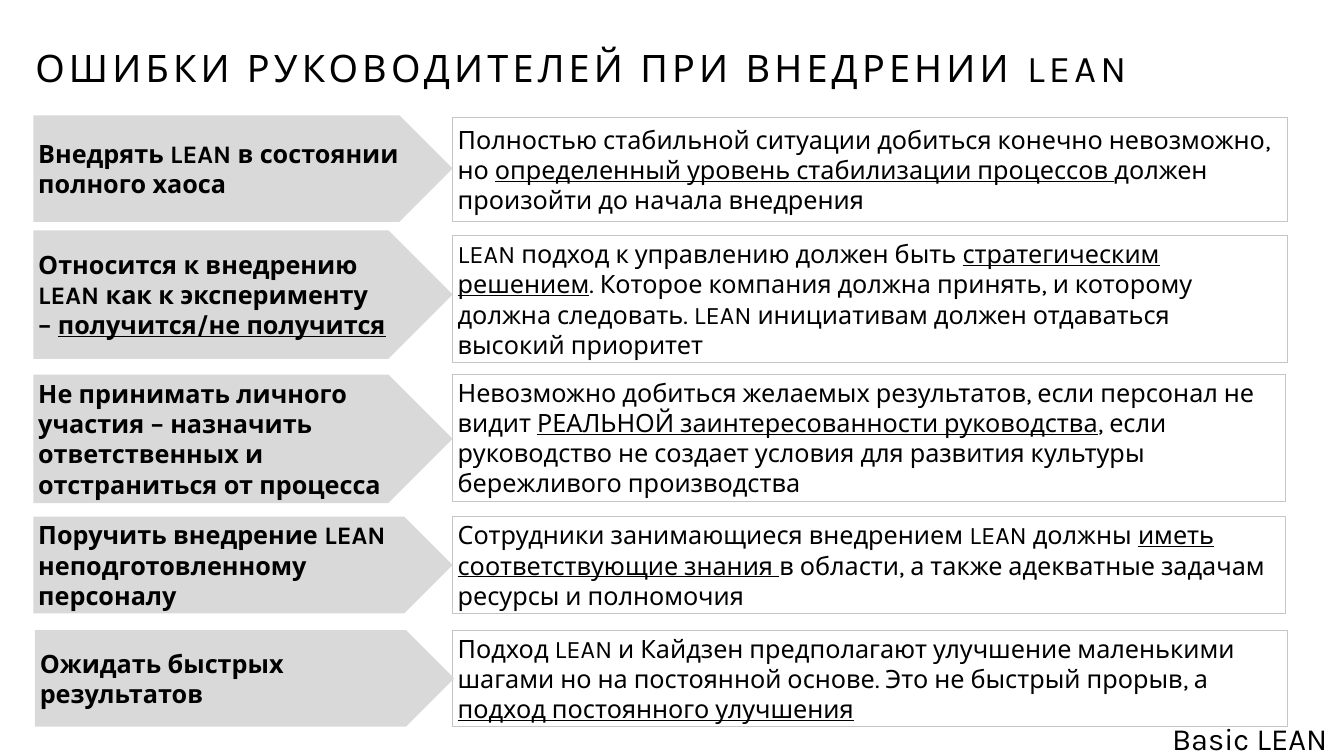
from pptx import Presentation
from pptx.dml.color import RGBColor
from pptx.enum.shapes import MSO_SHAPE
from pptx.enum.text import MSO_ANCHOR, MSO_AUTO_SIZE, PP_ALIGN
from pptx.util import Pt

BLACK = RGBColor(0x00, 0x00, 0x00)
ARROW_GREY = RGBColor(0xD9, 0xD9, 0xD9)
BORDER_GREY = RGBColor(0xC5, 0xC5, 0xC5)
PENTAGON, RECTANGLE = MSO_SHAPE.PENTAGON, MSO_SHAPE.RECTANGLE
TOP, MIDDLE = MSO_ANCHOR.TOP, MSO_ANCHOR.MIDDLE
LEFT = PP_ALIGN.LEFT
NO_AUTOFIT = MSO_AUTO_SIZE.NONE

FONT = "Karla"
TITLE_ONLY = 5
ARROW_LEFT, ARROW_WIDTH = 47.5, 599
CARD_LEFT, CARD_WIDTH, NARROW_CARD_WIDTH = 646.5, 1191.6, 1188.7

# Underscores enclose underlined words.
# Each row: mistake paragraphs, arrow box, explanation, card box.
ROWS = [
    (["Внедрять LEAN в состоянии", "полного хаоса"],
     (ARROW_LEFT, 164.9, ARROW_WIDTH, 151.9),
     "Полностью стабильной ситуации добиться конечно невозможно, но "
     "_определенный уровень стабилизации процессов _"
     "должен произойти до начала внедрения",
     (CARD_LEFT, 167, CARD_WIDTH, 149.8)),
    (["Относится к внедрению LEAN как к эксперименту",
      "– _получится/не получится_"],
     (ARROW_LEFT, 329, ARROW_WIDTH, 183.6),
     "LEAN подход к управлению должен быть _стратегическим решением_. "
     "Которое компания должна принять, и которому должна следовать. "
     "LEAN инициативам должен отдаваться высокий приоритет",
     (CARD_LEFT, 336.2, CARD_WIDTH, 181.4)),
    (["Не принимать личного участия – назначить ответственных и "
      "отстраниться от процесса"],
     (ARROW_LEFT, 535, ARROW_WIDTH, 183.6),
     "Невозможно добиться желаемых результатов, если персонал не видит "
     "_РЕАЛЬНОЙ заинтересованности руководства_, если руководство не "
     "создает условия для развития культуры бережливого производства",
     (CARD_LEFT, 534.2, NARROW_CARD_WIDTH, 181.4)),
    (["Поручить внедрение LEAN", "неподготовленному персоналу"],
     (ARROW_LEFT, 738, ARROW_WIDTH, 138.2),
     "Сотрудники занимающиеся внедрением LEAN должны "
     "_иметь соответствующие знания _"
     "в области, а также адекватные задачам ресурсы и полномочия",
     (CARD_LEFT, 738, NARROW_CARD_WIDTH, 138.2)),
    (["Ожидать быстрых", "результатов"],
     (ARROW_LEFT + 2.2, 900, ARROW_WIDTH, 138.2),
     "Подход LEAN и Кайдзен предполагают улучшение маленькими шагами но "
     "на постоянной основе. Это не быстрый прорыв, а "
     "_подход постоянного улучшения_",
     (CARD_LEFT, 900, CARD_WIDTH, 138.2)),
]


def in_points(box):
    return [Pt(length) for length in box]


def write(frame, paragraphs, size, bold=False, anchor=MIDDLE):
    """Fill the frame, underlining the words between underscores."""
    frame.word_wrap = True
    frame.vertical_anchor = anchor
    for index, content in enumerate(paragraphs):
        paragraph = frame.add_paragraph() if index else frame.paragraphs[0]
        paragraph.alignment = LEFT
        font = paragraph.font
        font.name, font.size, font.bold = FONT, Pt(size), bold
        font.color.rgb = BLACK
        for position, words in enumerate(content.split("_")):
            if words:
                run = paragraph.add_run()
                run.text = words
                if position % 2:
                    run.font.underline = True


def add_title(slide, box):
    title = slide.shapes.title
    title.left, title.top, title.width, title.height = in_points(box)
    frame = title.text_frame
    write(frame, ["ОШИБКИ РУКОВОДИТЕЛЕЙ ПРИ ВНЕДРЕНИИ LEAN"], 54, anchor=TOP)
    frame.auto_size = NO_AUTOFIT
    for run in frame.paragraphs[0].runs:
        run.font._element.set("spc", "600")


def add_mistake(slide, box, paragraphs):
    arrow = slide.shapes.add_shape(PENTAGON, *in_points(box))
    arrow.shadow.inherit = False
    arrow.fill.solid()
    arrow.fill.fore_color.rgb = ARROW_GREY
    arrow.line.fill.background()
    write(arrow.text_frame, paragraphs, 36, bold=True)


def add_explanation(slide, box, explanation):
    card = slide.shapes.add_shape(RECTANGLE, *in_points(box))
    card.shadow.inherit = False
    card.fill.background()
    card.line.color.rgb = BORDER_GREY
    card.line.width = Pt(1)
    write(card.text_frame, [explanation], 36)


def add_footer(slide, box):
    footer = slide.shapes.add_textbox(*in_points(box))
    write(footer.text_frame, ["Basic LEAN"], 44, anchor=TOP)


def main():
    presentation = Presentation()
    presentation.slide_width, presentation.slide_height = Pt(1919.5), Pt(1080)
    slide = presentation.slides.add_slide(presentation.slide_layouts[TITLE_ONLY])
    add_title(slide, (43.2, 59.8, 1749.6, 72.7))
    for mistake, arrow_box, explanation, card_box in ROWS:
        add_explanation(slide, card_box, explanation)
        add_mistake(slide, arrow_box, mistake)
    add_footer(slide, (1666.8, 1025.3, 252.7, 60.5))
    presentation.save("out.pptx")


if __name__ == "__main__":
    main()
